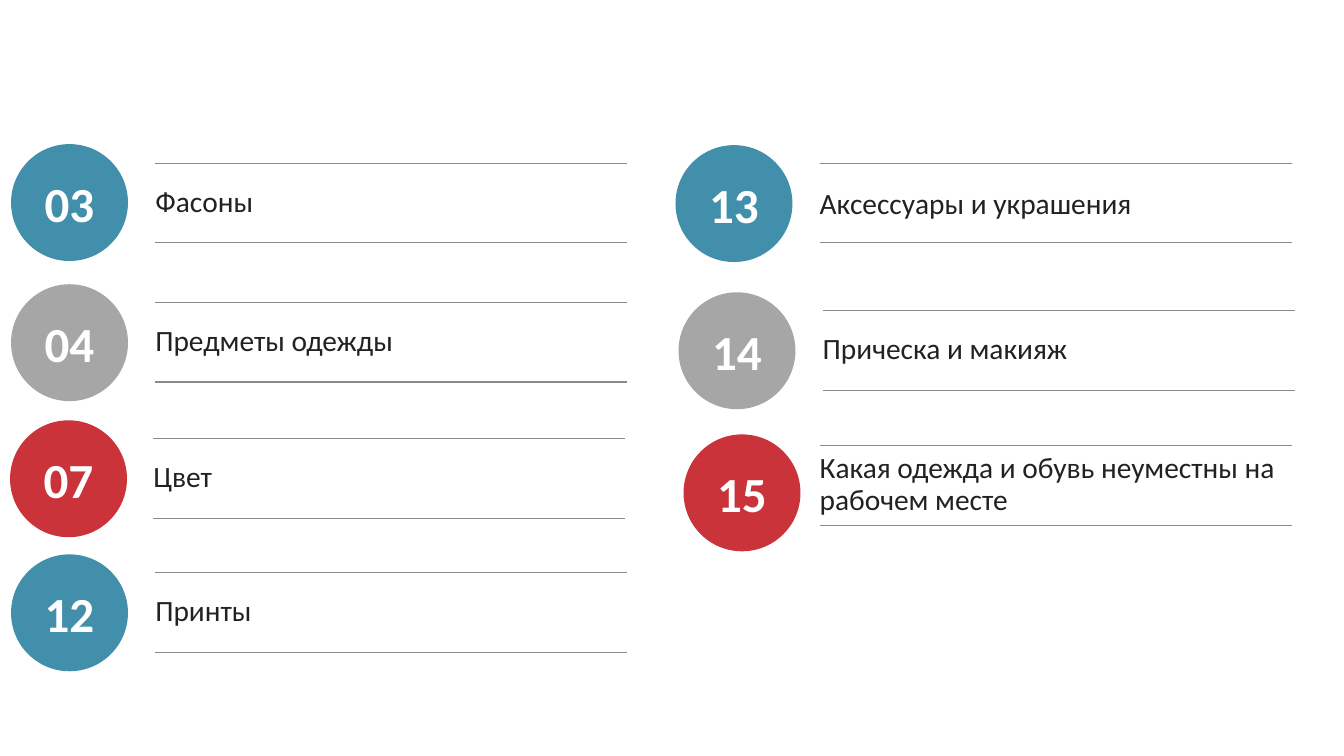
from collections import namedtuple

from lxml import etree
from pptx import Presentation
from pptx.dml.color import RGBColor
from pptx.enum.shapes import MSO_CONNECTOR, MSO_SHAPE
from pptx.enum.text import MSO_ANCHOR, MSO_AUTO_SIZE, PP_ALIGN
from pptx.oxml.ns import qn
from pptx.util import Inches, Pt

STRAIGHT = MSO_CONNECTOR.STRAIGHT
OVAL = MSO_SHAPE.OVAL
MIDDLE = MSO_ANCHOR.MIDDLE
GROW = MSO_AUTO_SIZE.SHAPE_TO_FIT_TEXT
LEFT, CENTER = PP_ALIGN.LEFT, PP_ALIGN.CENTER

BLUE = RGBColor(0x41, 0x8F, 0xAB)
GRAY = RGBColor(0xA6, 0xA6, 0xA6)
RED = RGBColor(0xCB, 0x33, 0x3B)
WHITE = RGBColor(0xFF, 0xFF, 0xFF)
INK = RGBColor(0x22, 0x22, 0x23)
RULE_COLOR = RGBColor(0x88, 0x8B, 0x8D)

FONT = "Calibri"
CIRCLE_SIZE = 1.16
RULE_WIDTH = 4.68
RULE_GAP = 0.79
LINE_HEIGHT = 0.32

Entry = namedtuple(
    "Entry",
    "number title color circle_left circle_top rule_left rule_top lines spacing",
    defaults=(1, 0.9),
)
ENTRIES = [
    Entry("03", "Фасоны", BLUE, 0.11, 1.43, 1.54, 1.62),
    Entry("04", "Предметы одежды", GRAY, 0.11, 2.82, 1.54, 3.0),
    Entry("07", "Цвет", RED, 0.1, 4.17, 1.52, 4.35),
    Entry("12", "Принты", BLUE, 0.11, 5.5, 1.54, 5.68),
    Entry("13", "Аксессуары и украшения", BLUE, 6.7, 1.44, 8.13, 1.62, spacing=1.0),
    Entry("14", "Прическа и макияж", GRAY, 6.73, 2.9, 8.16, 3.08),
    Entry("15", "Какая одежда и обувь неуместны на рабочем месте", RED,
          6.78, 4.31, 8.13, 4.42, lines=2),
]


def write_text(shape, text, size, color, bold=False, align=LEFT, spacing=1.0):
    """Fill a shape with one formatted, vertically centred paragraph."""
    frame = shape.text_frame
    frame.word_wrap = True
    frame.vertical_anchor = MIDDLE
    paragraph = frame.paragraphs[0]
    paragraph.alignment = align
    paragraph.line_spacing = spacing
    run = paragraph.add_run()
    run.text = text
    run.font.name = FONT
    run.font.size = Pt(size)
    run.font.bold = bold
    run.font.color.rgb = color


def add_circle(shapes, entry):
    """Draw the coloured circle with the page number."""
    circle = shapes.add_shape(
        OVAL, Inches(entry.circle_left), Inches(entry.circle_top),
        Inches(CIRCLE_SIZE), Inches(CIRCLE_SIZE))
    circle.shadow.inherit = False
    circle.fill.solid()
    circle.fill.fore_color.rgb = entry.color
    circle.line.fill.background()
    write_text(circle, entry.number, 35, WHITE, bold=True, align=CENTER)


def add_title(shapes, entry):
    """Place the entry title midway between its two rules."""
    height = LINE_HEIGHT * entry.lines
    top = entry.rule_top + (RULE_GAP - height) / 2
    box = shapes.add_textbox(
        Inches(entry.rule_left), Inches(top), Inches(RULE_WIDTH), Inches(height))
    frame = box.text_frame
    frame.margin_left = frame.margin_right = 0
    frame.margin_top = frame.margin_bottom = 0
    frame.auto_size = GROW
    write_text(box, entry.title, 21, INK, spacing=entry.spacing)


def add_rule(shapes, left, top):
    """Draw a thin horizontal rule without a shadow."""
    rule = shapes.add_connector(
        STRAIGHT, Inches(left), Inches(top), Inches(left + RULE_WIDTH), Inches(top))
    rule.line.color.rgb = RULE_COLOR
    rule.line.width = Pt(0.75)
    etree.SubElement(rule._element.spPr, qn("a:effectLst"))


def add_entry(slide, entry):
    """Group the circle, title and rules of one contents entry."""
    shapes = slide.shapes.add_group_shape().shapes
    add_circle(shapes, entry)
    add_title(shapes, entry)
    for top in (entry.rule_top, entry.rule_top + RULE_GAP):
        add_rule(shapes, entry.rule_left, top)


def main():
    """Build the contents slide and save it."""
    presentation = Presentation()
    presentation.slide_width = Inches(13.33)
    presentation.slide_height = Inches(7.5)
    slide = presentation.slides.add_slide(presentation.slide_layouts[6])
    for entry in ENTRIES:
        add_entry(slide, entry)
    presentation.save("out.pptx")


if __name__ == "__main__":
    main()
